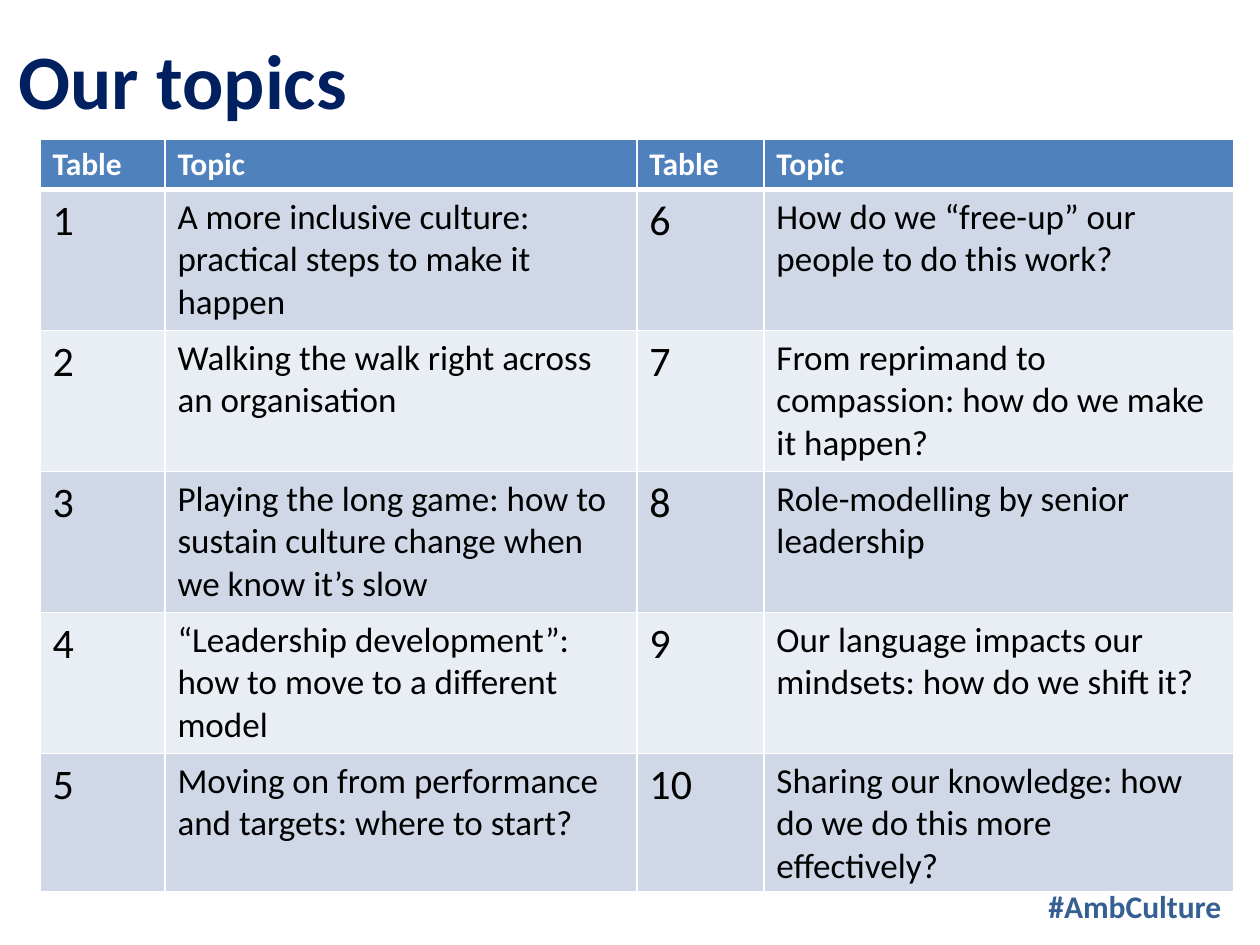
from lxml.etree import SubElement
from pptx import Presentation
from pptx.dml.color import RGBColor
from pptx.enum.text import MSO_ANCHOR as Anchor
from pptx.oxml.ns import qn
from pptx.util import Pt

# Content
TITLE = "Our topics"
HASHTAG = "#AmbCulture"
HEADER = ("Table", "Topic")
TOPICS = [
    "A more inclusive culture: practical steps to make it happen",
    "Walking the walk right across an organisation",
    "Playing the long game: how to sustain culture change when we know it’s slow",
    "“Leadership development”: how to move to a different model",
    "Moving on from performance and targets: where to start?",
    "How do we “free-up” our people to do this work?",
    "From reprimand to compassion: how do we make it happen?",
    "Role-modelling by senior leadership",
    "Our language impacts our mindsets: how do we shift it?",
    "Sharing our knowledge: how do we do this more effectively?",
]

# Layout in px, 126 to the inch
PX = 914400 // 126
COLS = [125, 472, 127, 470]
ROWS = [50, 141, 141, 141, 141, 98]
HEADER_FILL, BANDS = "4F81BD", ("D0D8E8", "E9EDF4")
WHITE, BLACK = "FFFFFF", "000000"


def px(*lengths):
    return [n * PX for n in lengths]


def rgb(color):
    return RGBColor.from_string(color)


def style(p, size, color, bold=False):
    p.font.name, p.font.size, p.font.bold = "Calibri", Pt(size), bold
    p.font.color.rgb = rgb(color)


def add_text(slide, box, text, size, color, anchor=Anchor.TOP):
    tf = slide.shapes.add_textbox(*px(*box)).text_frame
    tf.word_wrap = True
    tf.vertical_anchor = anchor
    tf.text = text
    style(tf.paragraphs[0], size, color, True)


def add_border(cell, side, width):
    tcPr = cell._tc.get_or_add_tcPr()
    ln = SubElement(tcPr, qn(f"a:ln{side}"), w=str(Pt(width)))
    SubElement(SubElement(ln, qn("a:solidFill")), qn("a:srgbClr"), val=WHITE)


prs = Presentation()
prs.slide_width, prs.slide_height = px(1260, 945)
slide = prs.slides.add_slide(prs.slide_layouts[6])

add_text(slide, (6, 0, 1134, 158), TITLE, 44, "002060", Anchor.MIDDLE)

# Topic table: the second half of the list sits beside the first
half = len(TOPICS) // 2
rows = [HEADER * 2] + [
    (str(i + 1), TOPICS[i], str(i + 1 + half), TOPICS[i + half]) for i in range(half)
]
table = slide.shapes.add_table(
    len(ROWS), len(COLS), *px(40, 139, sum(COLS), sum(ROWS))
).table
for column, width in zip(table.columns, COLS):
    column.width = width * PX
for row, height in zip(table.rows, ROWS):
    row.height = height * PX

for r, texts in enumerate(rows):
    for c, text in enumerate(texts):
        cell = table.cell(r, c)
        cell.text = text
        for side in "LRTB":
            thick = (r, side) in ((0, "B"), (1, "T"))
            add_border(cell, side, 3 if thick else 1)
        cell.fill.solid()
        cell.fill.fore_color.rgb = rgb(BANDS[(r - 1) % 2] if r else HEADER_FILL)
        p = cell.text_frame.paragraphs[0]
        if r == 0:
            style(p, 18, WHITE, True)
        else:
            style(p, 20 if c % 2 else 24, BLACK)

# Hashtag
add_text(slide, (1036, 881, 209, 50), HASHTAG, 18, "376092")

prs.save("out.pptx")
